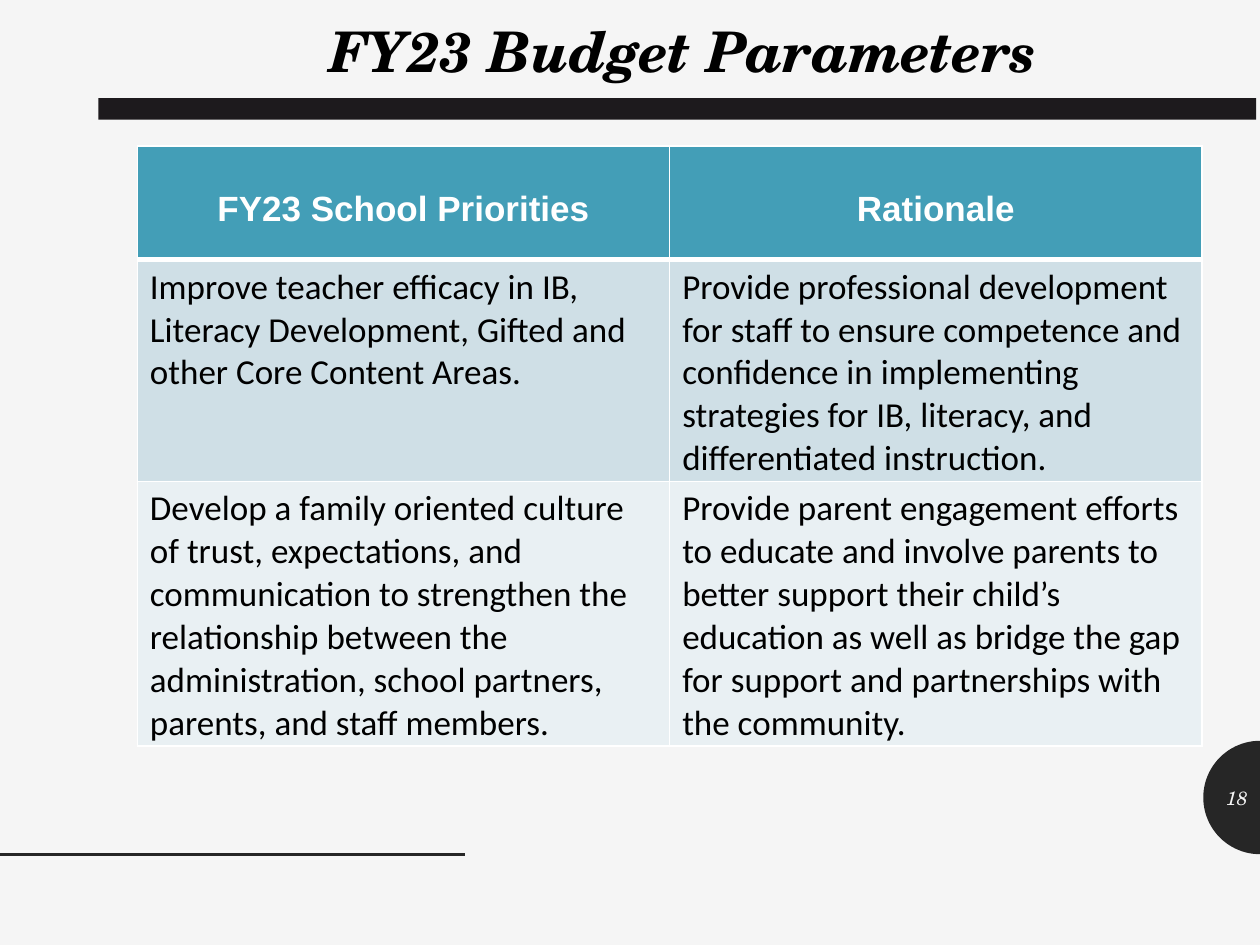
"""Build the FY23 budget parameters slide with its table of priorities."""
import math
from lxml import etree
from pptx import Presentation, util as u
from pptx.dml.color import RGBColor
from pptx.enum import shapes, text
from pptx.oxml import ns

COLORS = {"paper": "F5F5F5", "dark": "262626", "bar": "1D1A1D", "head": "439EB7",
          "odd": "CFDFE6", "even": "E9F0F3", "white": "FFFFFF", "black": "000000"}
SCHOLA = "TeX Gyre Schola"
PRIORITIES = [
    ("FY23 School Priorities", "Rationale"),
    ("Improve teacher efficacy in IB, Literacy Development, Gifted and other Core Content Areas.",
     "Provide professional development for staff to ensure competence and confidence in "
     "implementing strategies for IB, literacy, and differentiated instruction."),
    ("Develop a family oriented culture of trust, expectations, and communication to strengthen "
     "the relationship between the administration, school partners, parents, and staff members.",
     "Provide parent engagement efforts to educate and involve parents to better support their "
     "child’s education as well as bridge the gap for support and partnerships with the community."),
]
HEAD = {"size": u.Pt(20), "name": "Arial", "bold": True}
BODY = {"size": u.Pt(20), "name": "Calibri", "bold": False}


def paint(fill, color):
    fill.solid()
    fill.fore_color.rgb = RGBColor.from_string(COLORS[color])


def write(frame, words, color, align, formats):
    frame.word_wrap = True
    paragraph = frame.paragraphs[0]
    paragraph.alignment = align
    run = paragraph.add_run()
    run.text = words
    for key, value in formats.items():
        setattr(run.font, key, value)
    run.font.color.rgb = RGBColor.from_string(COLORS[color])


deck = Presentation()
deck.slide_width, deck.slide_height = u.Inches(10), u.Inches(7.5)
slide = deck.slides.add_slide(deck.slide_layouts[5])
paint(slide.background.fill, "paper")

radius, middle = 0.45, 6.33
arc = [(u.Inches(10 - radius * math.sin(math.pi * step / 48)),
        u.Inches(middle - radius * math.cos(math.pi * step / 48))) for step in range(49)]
builder = slide.shapes.build_freeform(*arc[0])
builder.add_line_segments(arc[1:], close=True)
badge = builder.convert_to_shape()
bar = slide.shapes.add_shape(shapes.MSO_SHAPE.RECTANGLE, u.Inches(0.78), u.Inches(0.78),
                             u.Inches(9.19), u.Inches(0.17))
for solid, color in ((badge, "dark"), (bar, "bar")):
    paint(solid.fill, color)
    solid.line.fill.background()
    solid.shadow.inherit = False

rule = slide.shapes.add_connector(shapes.MSO_CONNECTOR.STRAIGHT, 0, u.Inches(6.78),
                                  u.Inches(3.69), u.Inches(6.78))
rule.line.width = u.Pt(2)
paint(rule.line.fill, "dark")
etree.SubElement(rule._element.spPr, ns.qn("a:effectLst"))

title = slide.shapes.title
title.left, title.top, title.width, title.height = map(u.Inches, (0.96, 0.08, 8.93, 0.64))
title.text_frame.vertical_anchor = text.MSO_ANCHOR.TOP
write(title.text_frame, "FY23 Budget Parameters", "black", text.PP_ALIGN.CENTER,
      {"size": u.Pt(32), "name": SCHOLA, "bold": True, "italic": True})

heights = (0.9, 1.76, 2.1)
grid = slide.shapes.add_table(3, 2, u.Inches(1.09), u.Inches(1.16),
                              u.Inches(8.45), u.Inches(sum(heights))).table
for r, (height, row) in enumerate(zip(heights, PRIORITIES)):
    grid.rows[r].height = u.Inches(height)
    for c, words in enumerate(row):
        cell = grid.cell(r, c)
        cell.margin_bottom = 0
        if r == 0:
            cell.margin_top = u.Inches(0.35)
            write(cell.text_frame, words, "white", text.PP_ALIGN.CENTER, HEAD)
        else:
            write(cell.text_frame, words, "black", text.PP_ALIGN.LEFT, BODY)
        props = cell._tc.get_or_add_tcPr()
        for side in "LRTB":
            thick = (r, side) in ((0, "B"), (1, "T"))
            edge = etree.SubElement(props, ns.qn(f"a:ln{side}"), w=str(u.Pt(3 if thick else 1)))
            ink = etree.SubElement(edge, ns.qn("a:solidFill"))
            etree.SubElement(ink, ns.qn("a:srgbClr"), val=COLORS["white"])
        paint(cell.fill, ("head", "odd", "even")[r])

number = slide.shapes.add_textbox(u.Inches(10 - radius), u.Inches(6.13), u.Inches(radius), u.Inches(0.4))
number.text_frame.vertical_anchor = text.MSO_ANCHOR.MIDDLE
write(number.text_frame, "18", "paper", text.PP_ALIGN.RIGHT,
      {"size": u.Pt(11), "name": SCHOLA, "italic": True})

deck.save("out.pptx")
